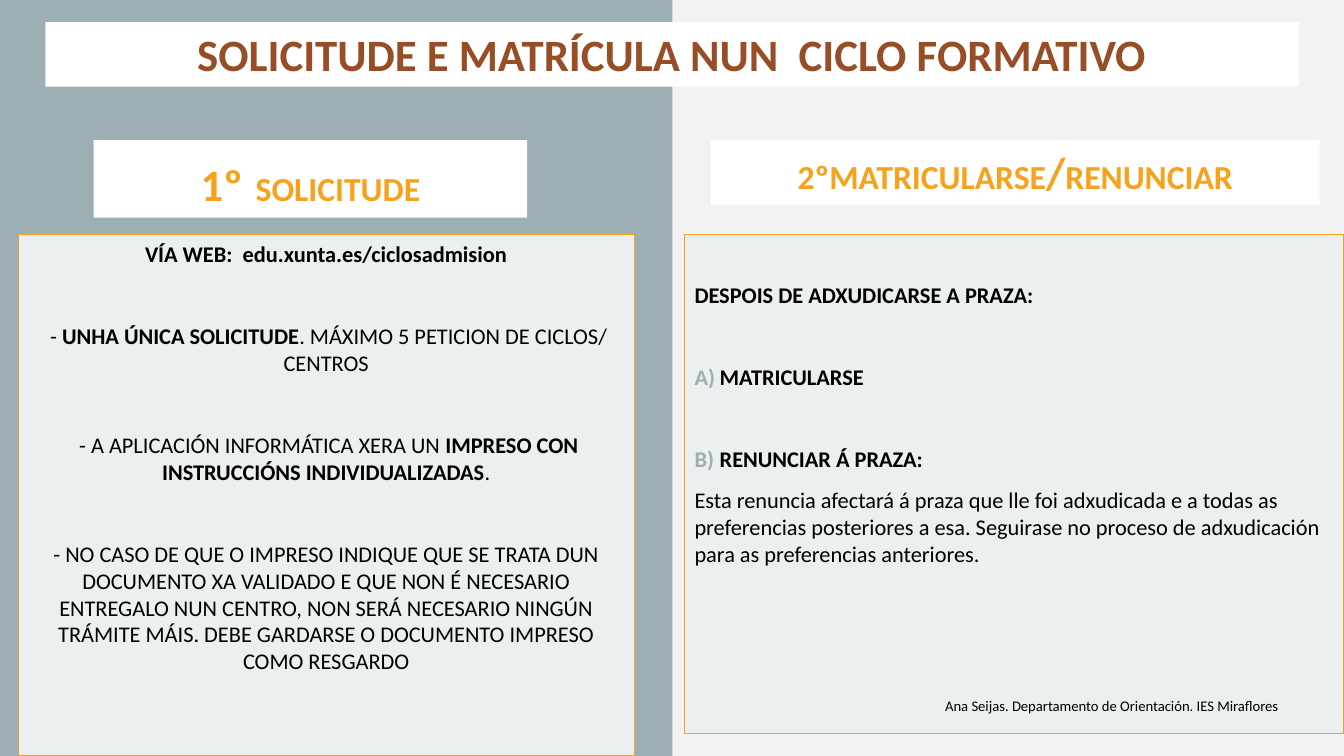
from dataclasses import dataclass

from lxml import etree
from pptx import Presentation
from pptx.dml.color import RGBColor
from pptx.enum import shapes, text
from pptx.oxml import ns
from pptx.util import Inches, Pt


@dataclass(frozen=True)
class Theme:
    font: str = "Calibri"
    background: str = "F2F2F2"
    band: str = "9BAFB5"
    panel: str = "EBEFF0"
    white: str = "FFFFFF"
    black: str = "000000"
    accent: str = "F6A21D"
    title: str = "974D25"
    heading_size: float = 32
    gap_size: float = 40
    subheading_size: float = 24
    body_size: float = 16
    footer_size: float = 10.5
    paragraph_gap: float = 10
    section_gap: float = 39.5


THEME = Theme()


@dataclass(frozen=True)
class Span:
    words: str
    bold: bool | None = None
    size: float | None = None


@dataclass(frozen=True)
class Block:
    spans: tuple[Span, ...]
    size: float = THEME.body_size
    color: str = THEME.black
    bold: bool = False
    align: text.PP_ALIGN = text.PP_ALIGN.LEFT
    space_before: float = 0
    letter: int | None = None


@dataclass(frozen=True)
class Box:
    left: float
    top: float
    width: float
    height: float
    fill: str | None = None
    line: str | None = None
    blocks: tuple[Block, ...] = ()
    inset_top: float = 0.05
    anchor: text.MSO_ANCHOR = text.MSO_ANCHOR.TOP
    wrap: bool = True


def heading(*spans: Span, color: str = THEME.accent) -> tuple[Block, ...]:
    return (Block(spans, THEME.heading_size, color, True, text.PP_ALIGN.CENTER),)


def request(*spans: Span, space_before: float = THEME.section_gap) -> Block:
    return Block(spans, align=text.PP_ALIGN.CENTER, space_before=space_before)


def option(words: str, letter: int) -> Block:
    return Block((Span(words),), bold=True, space_before=THEME.section_gap, letter=letter)


REQUEST_BLOCKS = (
    request(Span("VÍA WEB:  edu.xunta.es/ciclosadmision", True), space_before=0),
    request(
        Span(" - "),
        Span("UNHA ÚNICA SOLICITUDE", True),
        Span(". MÁXIMO 5 PETICION DE CICLOS/ CENTROS"),
    ),
    request(
        Span(" - A APLICACIÓN INFORMÁTICA XERA UN "),
        Span("IMPRESO CON INSTRUCCIÓNS INDIVIDUALIZADAS", True),
        Span("."),
    ),
    request(Span(
        "- NO CASO DE QUE O IMPRESO INDIQUE QUE SE TRATA DUN DOCUMENTO XA VALIDADO "
        "E QUE NON É NECESARIO ENTREGALO NUN CENTRO, NON SERÁ NECESARIO NINGÚN "
        "TRÁMITE MÁIS. DEBE GARDARSE O DOCUMENTO IMPRESO COMO RESGARDO"
    )),
)

ENROLMENT_BLOCKS = (
    Block((Span("DESPOIS DE ADXUDICARSE A PRAZA:"),), bold=True),
    option("MATRICULARSE", 1),
    option("RENUNCIAR Á PRAZA:", 2),
    Block((Span(
        "Esta renuncia afectará á praza que lle foi adxudicada e a todas as "
        "preferencias posteriores a esa. Seguirase no proceso de adxudicación "
        "para as preferencias anteriores."
    ),), space_before=THEME.paragraph_gap),
)

FOOTER = Block(
    (Span("Ana Seijas. Departamento de Orientación. IES Miraflores"),),
    THEME.footer_size, align=text.PP_ALIGN.RIGHT,
)

BOXES = (
    Box(0, 0, 6.67, 7.5, THEME.band),
    Box(6.79, 2.33, 6.54, 4.95, THEME.panel, THEME.accent, ENROLMENT_BLOCKS, 0.46),
    Box(0.18, 2.33, 6.11, 5.17, THEME.panel, THEME.accent, REQUEST_BLOCKS),
    Box(4.45, 6.8, 8.33, 0.4, blocks=(FOOTER,), anchor=text.MSO_ANCHOR.MIDDLE),
    Box(0.93, 1.39, 4.3, 0.77, THEME.white, blocks=heading(
        Span("1º"),
        Span(" ", size=THEME.gap_size),
        Span("SOLICITUDE", size=THEME.subheading_size),
    )),
    Box(7.05, 1.39, 6.04, 0.64, THEME.white, blocks=heading(
        Span("2ºMATRICULARSE", size=THEME.subheading_size),
        Span("/"),
        Span("RENUNCIAR", size=THEME.subheading_size),
    )),
    Box(0.45, 0.22, 12.43, 0.64, THEME.white, wrap=False, blocks=heading(
        Span("SOLICITUDE E MATRÍCULA NUN  CICLO FORMATIVO"), color=THEME.title,
    )),
)


def add_letter(paragraph, letter: int) -> None:
    properties = paragraph._p.get_or_add_pPr()
    properties.set("marL", str(Inches(0.25)))
    properties.set("indent", str(-Inches(0.25)))
    bullet_color = etree.Element(ns.qn("a:buClr"))
    etree.SubElement(bullet_color, ns.qn("a:srgbClr"), val=THEME.band)
    numbering = etree.Element(
        ns.qn("a:buAutoNum"), type="alphaUcParenR", startAt=str(letter)
    )
    position = 1 if properties.find(ns.qn("a:spcBef")) is not None else 0
    properties.insert(position, bullet_color)
    properties.insert(position + 1, numbering)


def write_block(paragraph, block: Block) -> None:
    paragraph.alignment = block.align
    paragraph.space_before = Pt(block.space_before)
    font = paragraph.font
    font.name = THEME.font
    font.size = Pt(block.size)
    font.bold = block.bold
    font.color.rgb = RGBColor.from_string(block.color)
    for span in block.spans:
        run = paragraph.add_run()
        run.text = span.words
        if span.bold is not None:
            run.font.bold = span.bold
        if span.size is not None:
            run.font.size = Pt(span.size)
    if block.letter is not None:
        add_letter(paragraph, block.letter)


def draw_box(slide, box: Box) -> None:
    bounds = [Inches(value) for value in (box.left, box.top, box.width, box.height)]
    if box.fill is None:
        shape = slide.shapes.add_textbox(*bounds)
    else:
        shape = slide.shapes.add_shape(shapes.MSO_SHAPE.RECTANGLE, *bounds)
        shape.shadow.inherit = False
        shape.fill.solid()
        shape.fill.fore_color.rgb = RGBColor.from_string(box.fill)
        if box.line is None:
            shape.line.fill.background()
        else:
            shape.line.color.rgb = RGBColor.from_string(box.line)
            shape.line.width = Pt(0.75)
    frame = shape.text_frame
    frame.word_wrap = box.wrap
    frame.vertical_anchor = box.anchor
    frame.margin_top = Inches(box.inset_top)
    for index, block in enumerate(box.blocks):
        write_block(frame.add_paragraph() if index else frame.paragraphs[0], block)


def main() -> None:
    presentation = Presentation()
    presentation.slide_width = Inches(13.33)
    presentation.slide_height = Inches(7.5)
    slide = presentation.slides.add_slide(presentation.slide_layouts[6])
    slide.background.fill.solid()
    slide.background.fill.fore_color.rgb = RGBColor.from_string(THEME.background)
    for box in BOXES:
        draw_box(slide, box)
    presentation.save("out.pptx")


if __name__ == "__main__":
    main()
